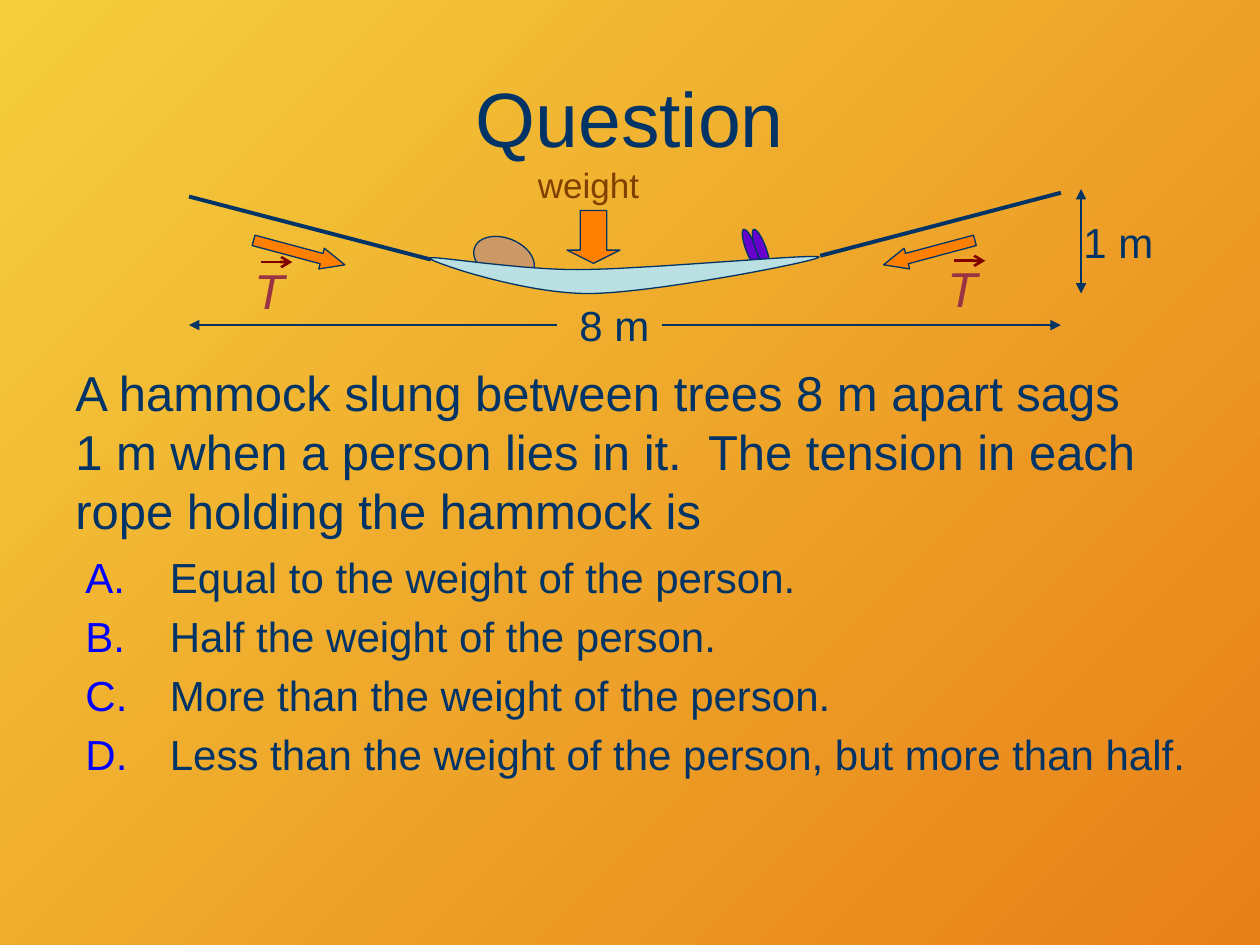
from pptx import Presentation
from pptx.dml.color import RGBColor
from pptx.enum.shapes import MSO_CONNECTOR, MSO_SHAPE
from pptx.enum.text import MSO_ANCHOR, MSO_AUTO_SIZE, PP_ALIGN
from pptx.oxml.ns import qn
from pptx.util import Inches, Pt
from lxml.etree import SubElement

NAVY, ORANGE, PURPLE, TAN, PALE_BLUE = "003366", "FF8000", "6600CC", "CC9966", "BBE0E3"
BROWN, RED, DARK_RED, BLUE = "804000", "9A3344", "800000", "0000FF"
GRADIENT = ("F5CE3D", "E88018")

QUESTION = ("A hammock slung between trees 8\u00a0m apart sags 1\u00a0m when a person "
            "lies in it.  The tension in each rope holding the hammock is")
ANSWERS = [
    "Equal to the weight of the person.",
    "Half the weight of the person.",
    "More than the weight of the person.",
    "Less than the weight of the person, but more than half.",
]
LABELS = [  # text, box, size, colour, italic
    ("8 m", (4.5, 2.33, 0.76, 0.5), 24, NAVY, False),
    ("1 m", (8.5, 1.67, 0.76, 0.5), 24, NAVY, False),
    ("weight", (4.17, 1.25, 1.01, 0.43), 20, BROWN, False),
    ("T", (7.42, 2, 0.44, 0.57), 28, RED, True),
    ("T", (1.92, 2.02, 0.44, 0.57), 28, RED, True),
]
BODY_PARTS = [  # feet, then head: box, rotation, fill
    ((5.92, 1.81, 0.08, 0.33), 339.6, PURPLE),
    ((6, 1.81, 0.08, 0.33), 339.6, PURPLE),
    ((3.75, 1.89, 0.5, 0.33), 21.4, TAN),
]
FORCES = [  # preset, box, rotation, adjustments
    (MSO_SHAPE.RIGHT_ARROW, (2, 1.92, 0.75, 0.17), 15, (0.5, 1.125)),
    (MSO_SHAPE.LEFT_ARROW, (7, 1.92, 0.75, 0.17), 345, (0.5, 1.125)),
    (MSO_SHAPE.DOWN_ARROW, (4.5, 1.67, 0.42, 0.42), 0, (0.5, 0.25)),
]
ROPES = [((1.5, 1.56), (3.42, 2.06)), ((8.42, 1.53), (6.51, 2.03))]
DIMENSIONS = [  # start, end, head, tail
    ((4.42, 2.58), (1.5, 2.58), None, "triangle"),
    ((5.25, 2.58), (8.42, 2.58), None, "triangle"),
    ((8.58, 1.5), (8.58, 2.33), "triangle", "triangle"),
]
VECTOR_MARKS = [((7.57, 2.07), (7.82, 2.07)), ((2.07, 2.08), (2.32, 2.08))]
HAMMOCK_START = (3.41, 2.05)
HAMMOCK_CURVES = [  # two control points and an end point each
    ((3.42, 2.08), (4.15, 2.33), (4.67, 2.33)),
    ((5.17, 2.33), (6.51, 2.07), (6.5, 2.04)),
    ((6.49, 2.01), (5.1, 2.14), (4.58, 2.14)),
    ((4.08, 2.14), (3.39, 2.02), (3.41, 2.05)),
]
CURVE_STEPS = 24


def color(value):
    return RGBColor.from_string(value)


def inches(values):
    return [Inches(value) for value in values]


def add_text(slide, box, lines, size, fill=NAVY, italic=False, align=PP_ALIGN.LEFT,
             anchor=MSO_ANCHOR.TOP, wrap=True, before=0):
    shape = slide.shapes.add_textbox(*inches(box))
    frame = shape.text_frame
    frame.word_wrap = wrap
    frame.auto_size = MSO_AUTO_SIZE.NONE if wrap else MSO_AUTO_SIZE.SHAPE_TO_FIT_TEXT
    frame.vertical_anchor = anchor
    for index, line in enumerate(lines):
        paragraph = frame.add_paragraph() if index else frame.paragraphs[0]
        paragraph.alignment = align
        paragraph.space_before = Pt(before)
        run = paragraph.add_run()
        run.text = line
        run.font.name, run.font.size, run.font.italic = "Arial", Pt(size), italic
        run.font.color.rgb = color(fill)
    return shape


def letter_paragraphs(shape, indent, fill):
    """Number the paragraphs A., B., C. with a hanging indent."""
    for paragraph in shape.text_frame.paragraphs:
        properties = paragraph._p.get_or_add_pPr()
        properties.set("marL", str(Inches(indent)))
        properties.set("indent", str(-Inches(indent)))
        bullet_color = SubElement(properties, qn("a:buClr"))
        SubElement(bullet_color, qn("a:srgbClr"), val=fill)
        SubElement(properties, qn("a:buFont"), typeface="+mj-lt")
        SubElement(properties, qn("a:buAutoNum"), type="alphaUcPeriod")


def paint(shape, fill):
    shape.shadow.inherit = False
    shape.fill.solid()
    shape.fill.fore_color.rgb = color(fill)
    shape.line.color.rgb = color(NAVY)
    shape.line.width = Pt(0.75)


def add_preset(slide, preset, box, rotation, fill, adjustments=()):
    shape = slide.shapes.add_shape(preset, *inches(box))
    shape.rotation = rotation
    for index, value in enumerate(adjustments):
        shape.adjustments[index] = value
    paint(shape, fill)


def add_line(slide, start, end, fill=NAVY, width=0.75, head=None, tail=None):
    line = slide.shapes.add_connector(MSO_CONNECTOR.STRAIGHT, *inches(start + end))
    line.line.color.rgb = color(fill)
    line.line.width = Pt(width)
    outline = line.line._get_or_add_ln()
    for tag, kind in (("a:headEnd", head), ("a:tailEnd", tail)):
        if kind:
            SubElement(outline, qn(tag), type=kind)
    SubElement(line._element.spPr, qn("a:effectLst"))


def curve_points(start, curves):
    """Sample a chain of cubic Bezier curves."""
    points = []
    for first, second, end in curves:
        for step in range(1, CURVE_STEPS + 1):
            t = step / CURVE_STEPS
            u = 1 - t
            points.append(tuple(
                u**3 * a + 3 * u * u * t * b + 3 * u * t * t * c + t**3 * d
                for a, b, c, d in zip(start, first, second, end)))
        start = end
    return points


def add_hammock(slide):
    # The builder rounds to whole units, so the points go in as EMU.
    builder = slide.shapes.build_freeform(*inches(HAMMOCK_START), scale=1.0)
    points = curve_points(HAMMOCK_START, HAMMOCK_CURVES)
    builder.add_line_segments([inches(point) for point in points], close=True)
    paint(builder.convert_to_shape(), PALE_BLUE)


def main():
    presentation = Presentation()
    presentation.slide_width, presentation.slide_height = Inches(10), Inches(7.5)
    slide = presentation.slides.add_slide(presentation.slide_layouts[6])
    background = slide.background.fill
    background.gradient()
    background.gradient_angle = 315
    for stop, position, value in zip(background.gradient_stops, (0, 1), GRADIENT):
        stop.position = position
        stop.color.rgb = color(value)

    add_text(slide, (0.5, 0.3, 9, 1.25), ["Question"], 44,
             align=PP_ALIGN.CENTER, anchor=MSO_ANCHOR.MIDDLE)
    add_text(slide, (0.5, 2.83, 9, 1.75), [QUESTION], 28, before=6.5)
    answers = add_text(slide, (0.58, 4.33, 9, 2), ANSWERS, 24, before=4.8)
    letter_paragraphs(answers, 0.67, BLUE)

    for box, rotation, fill in BODY_PARTS:
        add_preset(slide, MSO_SHAPE.OVAL, box, rotation, fill)
    add_hammock(slide)
    for start, end in ROPES:
        add_line(slide, start, end, width=2.25)
    for start, end, head, tail in DIMENSIONS:
        add_line(slide, start, end, head=head, tail=tail)
    for preset, box, rotation, adjustments in FORCES:
        add_preset(slide, preset, box, rotation, ORANGE, adjustments)
    for text, box, size, fill, italic in LABELS:
        add_text(slide, box, [text], size, fill=fill, italic=italic, wrap=False)
    for start, end in VECTOR_MARKS:
        add_line(slide, start, end, fill=DARK_RED, width=1.5, tail="arrow")

    presentation.save("out.pptx")


if __name__ == "__main__":
    main()
